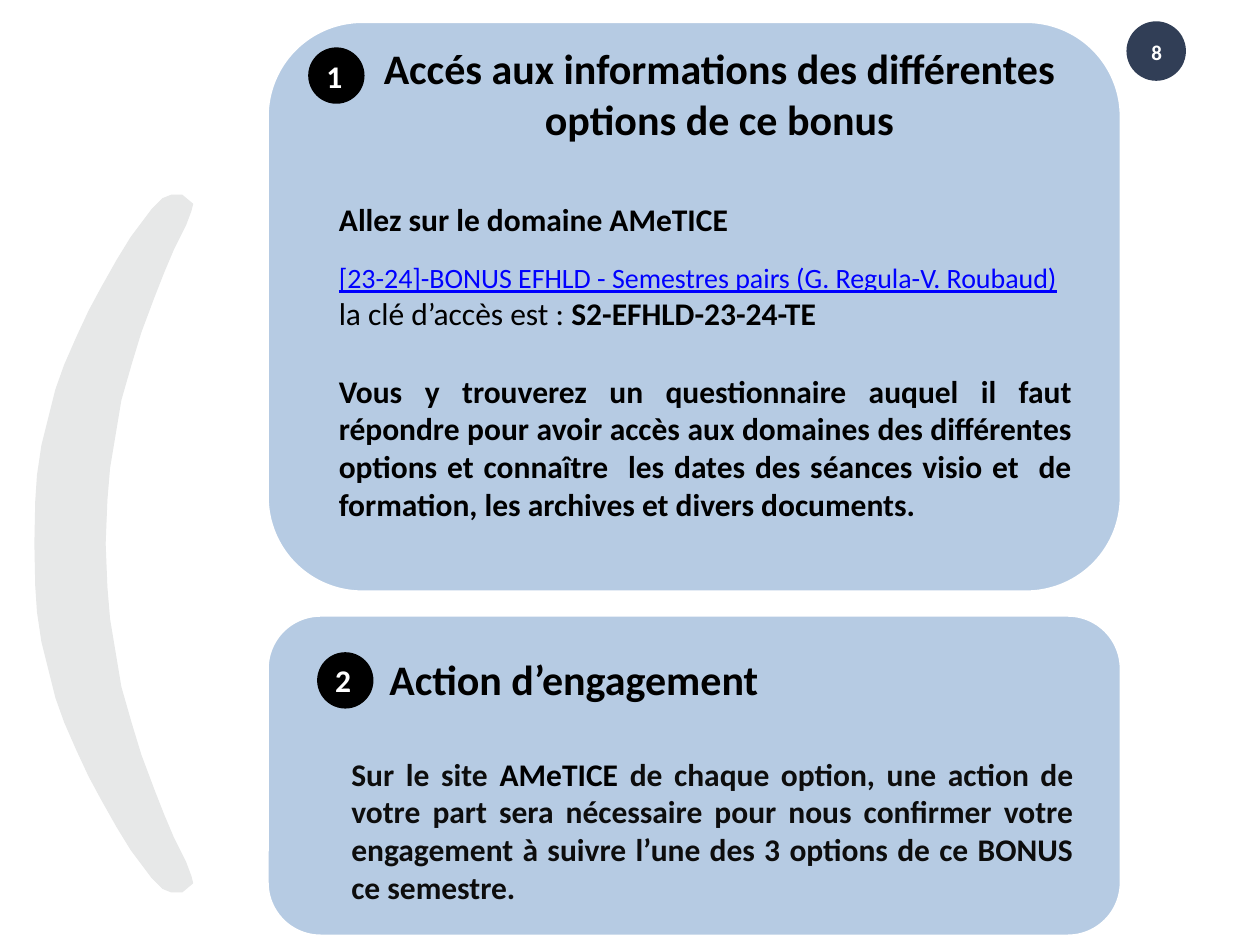
from lxml.etree import SubElement
from pptx import Presentation
from pptx.dml.color import RGBColor
from pptx.enum.shapes import MSO_SHAPE
from pptx.enum.text import MSO_ANCHOR, MSO_AUTO_SIZE, PP_ALIGN
from pptx.oxml.ns import qn
from pptx.util import Pt

BLACK = RGBColor(0x00, 0x00, 0x00)
INK = RGBColor(0x0D, 0x0D, 0x0D)
WHITE = RGBColor(0xFF, 0xFF, 0xFF)
BLUE = RGBColor(0x4F, 0x81, 0xBD)
LINK = RGBColor(0x00, 0x00, 0xFF)
NAVY = RGBColor(0x31, 0x3E, 0x56)
GREY = RGBColor(0xE7, 0xE8, 0xE8)

# Upper half of the crescent, as offsets from its top left corner
INNER = [(40, 199), (41, 174), (42.5, 156), (45, 141), (49, 117), (55, 96),
         (60.5, 78), (68, 58), (73.5, 44), (79, 31), (86, 17), (89, 9)]
OUTER = [(90, 5), (84, 0), (78, 0), (73, 2), (67, 8), (61, 16), (55, 24),
         (47, 37), (38, 53), (31, 66), (24, 81), (17, 97), (12, 111),
         (8, 127), (4, 143), (1.5, 160), (0.5, 175), (0, 199)]


def style(sp, fill, line=None, width=2):
    sp.shadow.inherit = False
    sp.fill.solid()
    sp.fill.fore_color.rgb = fill
    if line is None:
        sp.line.fill.background()
    else:
        sp.line.color.rgb = line
        sp.line.width = Pt(width)


def add_shape(s, kind, box, fill, line=None):
    sp = s.shapes.add_shape(kind, *map(Pt, box))
    style(sp, fill, line)
    return sp


def set_text(sp, paragraphs, size=18, color=BLACK, bold=True,
             align=PP_ALIGN.LEFT, inset=True):
    """Fill a box; each paragraph is a list of (text, font overrides)."""
    tf = sp.text_frame
    tf.word_wrap = True
    tf.auto_size = MSO_AUTO_SIZE.NONE
    if not inset:
        tf.margin_left = tf.margin_right = tf.margin_top = tf.margin_bottom = 0
    tf.vertical_anchor = MSO_ANCHOR.TOP if inset else MSO_ANCHOR.MIDDLE
    for i, runs in enumerate(paragraphs):
        p = tf.add_paragraph() if i else tf.paragraphs[0]
        p.alignment = align
        p.font.name = "Calibri"
        p.font.size = Pt(size)
        p.font.bold = bold
        p.font.color.rgb = color
        for text, font in runs:
            r = p.add_run()
            r.text = text
            if "color" in font:
                r.font.color.rgb = font["color"]
            if "size" in font:
                r.font.size = Pt(font["size"])
            if "bold" in font:
                r.font.bold = font["bold"]
            if "underline" in font:
                r.font.underline = font["underline"]


def add_text(s, box, paragraphs, **options):
    set_text(s.shapes.add_textbox(*map(Pt, box)), paragraphs, **options)


def add_crescent(s, box):
    x, y, w, h = box
    top = INNER + OUTER
    points = top + [(dx, h - dy) for dx, dy in reversed(top)]
    points = [(Pt(x + dx), Pt(y + dy)) for dx, dy in points]
    builder = s.shapes.build_freeform(*points[0])
    builder.add_line_segments(points[1:], close=True)
    style(builder.convert_to_shape(), GREY, GREY, 0.75)


def add_page_number(s, box, number):
    x, y, w, h = box
    add_shape(s, MSO_SHAPE.OVAL, box, NAVY)
    add_text(s, (x + 7, y + 10.3, 20.5, 15), [[(number, {})]], size=12,
             color=WHITE, align=PP_ALIGN.CENTER, inset=False)


def add_card(s, box):
    sp = add_shape(s, MSO_SHAPE.FLOWCHART_ALTERNATE_PROCESS, box, BLUE, WHITE)
    solid = sp.element.spPr.find(qn("a:solidFill"))
    SubElement(solid[0], qn("a:alpha")).set("val", "41000")


def add_badge(s, x, y, number):
    add_shape(s, MSO_SHAPE.OVAL, (x, y, 30.2, 30.2), BLACK, BLACK)
    add_text(s, (x + 9.4, y + 4.3, 21.6, 21.6), [[(number, {})]],
             color=WHITE, inset=False)


def add_access_card(s, box):
    x, y, w, h = box
    add_card(s, box)

    # Title, brought in front of the card
    title = s.shapes.title
    title.left, title.top = Pt(x + 41.1), Pt(y + 12.3)
    title.width, title.height = Pt(434.9), Pt(57.6)
    set_text(title, [[("Accés aux informations des différentes options "
                       "de ce bonus", {})]],
             size=24, align=PP_ALIGN.CENTER, inset=False)
    s.shapes.element.append(title.element)

    # Where to go and the access key
    add_text(s, (x + 41.1, y + 102.3, 246.2, 21.6),
             [[("Allez sur le domaine AMeTICE", {})]], inset=False)
    add_text(s, (x + 33.9, y + 133.2, 512.6, 48.2), [
        [("[23-24]-BONUS EFHLD - Semestres pairs (G. Regula-V. Roubaud)",
          {"size": 16, "color": LINK, "underline": True})],
        [("la clé d’accès est : ", {}),
         ("S2-EFHLD-23-24-TE", {"bold": True})],
    ], bold=False)

    # What is found there
    add_text(s, (x + 33.9, y + 196.6, 433.4, 115.2), [[(
        "Vous y trouverez un questionnaire auquel il faut répondre pour "
        "avoir accès aux domaines des différentes options et connaître  les "
        "dates des séances visio et  de formation, les archives et divers "
        "documents.", {})]], align=PP_ALIGN.JUSTIFY)
    add_badge(s, x + 24.5, y + 15.9, "1")


def add_engagement_card(s, box):
    x, y, w, h = box
    add_card(s, box)
    add_text(s, (x + 69.9, y + 22.3, 236.2, 28.8),
             [[("Action d’engagement", {})]], size=24, inset=False)
    add_text(s, (x + 41.1, y + 76.3, 427, 95.8), [[
        ("Sur le site ", {}),
        ("AMeTICE ", {"color": BLACK}),
        ("de chaque option, une action de votre part sera nécessaire pour "
         "nous confirmer votre engagement à suivre l’une des 3 options de "
         "ce BONUS ce semestre.", {}),
    ]], color=INK, align=PP_ALIGN.JUSTIFY)
    add_badge(s, x + 29.6, y + 22.3, "2")


def main():
    prs = Presentation()
    prs.slide_width, prs.slide_height = Pt(720), Pt(540)
    s = prs.slides.add_slide(prs.slide_layouts[5])
    add_crescent(s, (20, 111.6, 90, 398))
    add_page_number(s, (643.7, 12.2, 34, 34), "8")
    add_engagement_card(s, (152.6, 351.4, 488.2, 183.6))
    add_access_card(s, (152.6, 12.2, 488.2, 326.2))
    prs.save("out.pptx")


if __name__ == "__main__":
    main()
